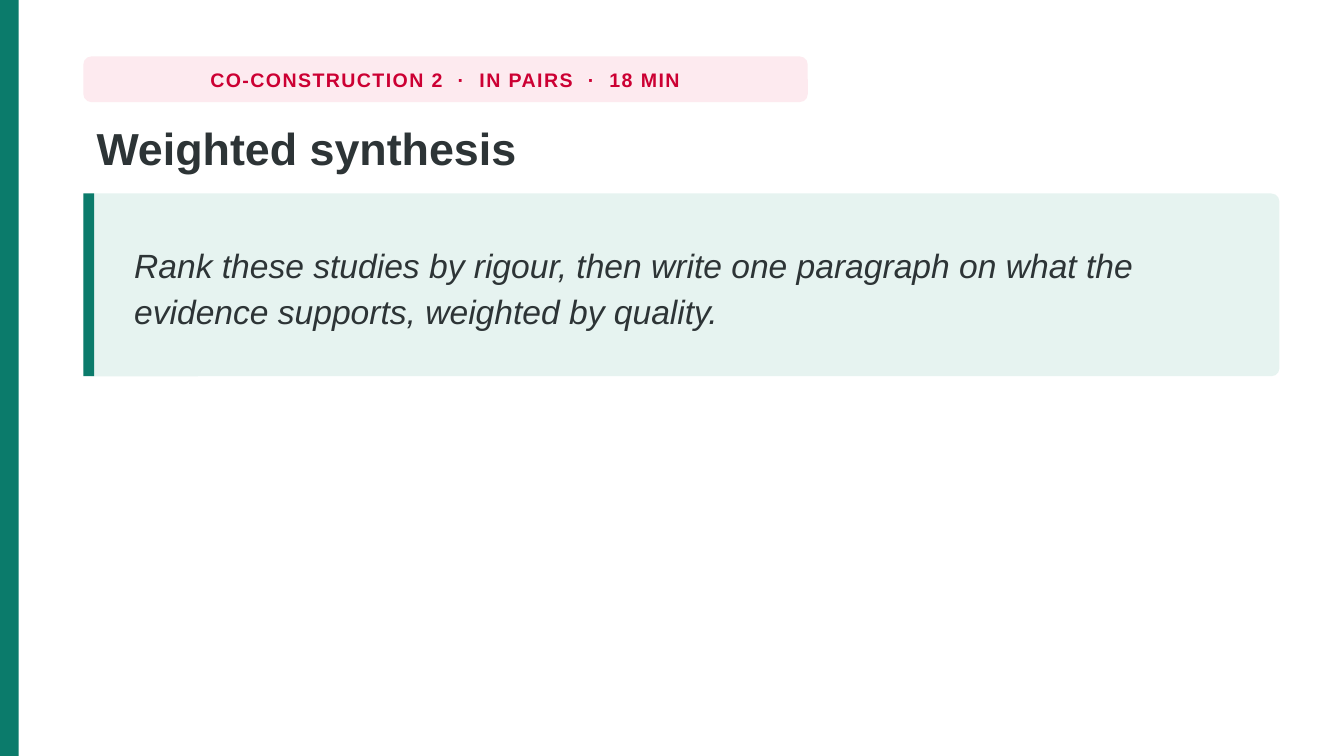
from pptx import Presentation
from pptx.dml.color import RGBColor
from pptx.enum.shapes import MSO_SHAPE
from pptx.enum.text import MSO_ANCHOR, PP_ALIGN
from pptx.util import Inches, Pt

RECTANGLE, ROUNDED = MSO_SHAPE.RECTANGLE, MSO_SHAPE.ROUNDED_RECTANGLE
TOP, MIDDLE = MSO_ANCHOR.TOP, MSO_ANCHOR.MIDDLE
LEFT, CENTER = PP_ALIGN.LEFT, PP_ALIGN.CENTER

WHITE = RGBColor(0xFF, 0xFF, 0xFF)
GREEN = RGBColor(0x0B, 0x7B, 0x6B)
PALE_GREEN = RGBColor(0xE6, 0xF3, 0xF0)
RED = RGBColor(0xCC, 0x00, 0x33)
PALE_RED = RGBColor(0xFD, 0xEA, 0xEF)
INK = RGBColor(0x2D, 0x34, 0x36)

ACTIVITY = "CO-CONSTRUCTION 2  ·  IN PAIRS  ·  18 MIN"
TITLE = "Weighted synthesis"
PROMPT = ("Rank these studies by rigour, then write one paragraph on what the "
          "evidence supports, weighted by quality.")

SLIDE_WIDTH = 10
SLIDE_HEIGHT = SLIDE_WIDTH * 9 / 16
MARGIN, CONTENT_WIDTH = 0.62, 8.9
CORNER_RADIUS = 0.06
BADGE = (MARGIN, 0.42, 5.39, 0.34)
TITLE_BOX = (MARGIN, 0.84, CONTENT_WIDTH, 0.56)
CARD_TOP, CARD_HEIGHT = 1.44, 1.36
CARD = (MARGIN, CARD_TOP, CONTENT_WIDTH, CARD_HEIGHT)
CARD_ACCENT = (MARGIN, CARD_TOP, 0.08, CARD_HEIGHT)
PROMPT_BOX = (0.9, CARD_TOP + 0.05, 8.35, CARD_HEIGHT - 0.1)


def add_panel(slide, box, color, rounded=False):
    shape = slide.shapes.add_shape(ROUNDED if rounded else RECTANGLE, *map(Inches, box))
    if rounded:
        shape.adjustments[0] = CORNER_RADIUS / min(box[2:])
    shape.shadow.inherit = False
    shape.fill.solid()
    shape.fill.fore_color.rgb = color
    shape.line.fill.background()


def add_text(slide, box, text, size, color, bold=False, italic=False, anchor=TOP,
             align=LEFT, line_spacing=None, letter_spacing=None, wrap=True):
    """Add a one-paragraph text box; letter_spacing is in points."""
    frame = slide.shapes.add_textbox(*map(Inches, box)).text_frame
    frame.word_wrap = wrap
    frame.vertical_anchor = anchor
    paragraph = frame.paragraphs[0]
    paragraph.alignment = align
    paragraph.line_spacing = line_spacing
    run = paragraph.add_run()
    run.text = text
    font = run.font
    font.name, font.size = "Arial", Pt(size)
    font.bold, font.italic = bold, italic
    font.color.rgb = color
    if letter_spacing:
        run._r.get_or_add_rPr().set("spc", str(round(letter_spacing * 100)))


def main():
    presentation = Presentation()
    presentation.slide_width = Inches(SLIDE_WIDTH)
    presentation.slide_height = Inches(SLIDE_HEIGHT)
    slide = presentation.slides.add_slide(presentation.slide_layouts[6])
    slide.background.fill.solid()
    slide.background.fill.fore_color.rgb = WHITE

    add_panel(slide, (0, 0, 0.14, SLIDE_HEIGHT), GREEN)
    add_panel(slide, BADGE, PALE_RED, rounded=True)
    add_text(slide, BADGE, ACTIVITY, 10.5, RED, bold=True, anchor=MIDDLE,
             align=CENTER, letter_spacing=0.8, wrap=False)
    add_text(slide, TITLE_BOX, TITLE, 24, INK, bold=True, line_spacing=1.02)
    add_panel(slide, CARD, PALE_GREEN, rounded=True)
    add_panel(slide, CARD_ACCENT, GREEN)
    add_text(slide, PROMPT_BOX, PROMPT, 18, INK, italic=True, anchor=MIDDLE,
             line_spacing=1.16)
    presentation.save("out.pptx")


if __name__ == "__main__":
    main()
